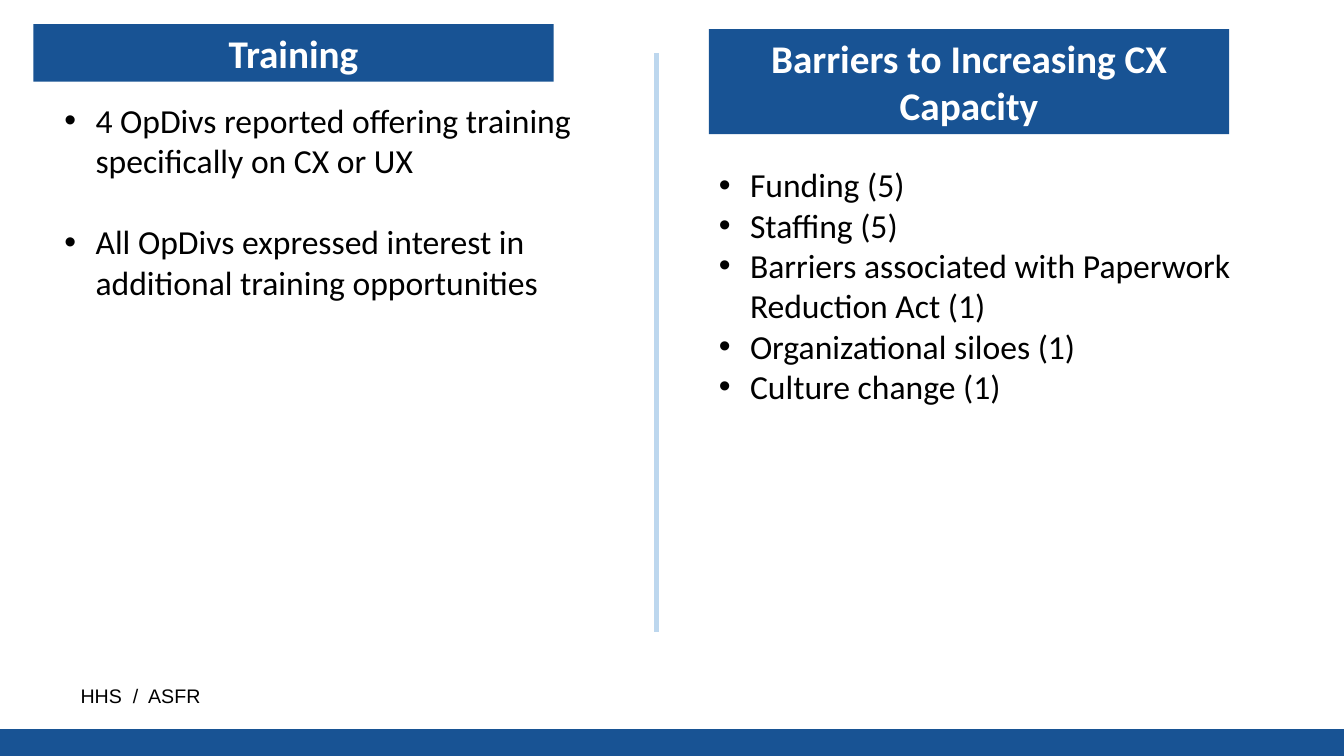
from dataclasses import dataclass

from lxml.etree import SubElement
from pptx import Presentation
from pptx.dml.color import RGBColor
from pptx.enum.shapes import MSO_CONNECTOR, MSO_SHAPE
from pptx.enum.text import MSO_ANCHOR, PP_ALIGN
from pptx.oxml.ns import qn
from pptx.shapes.autoshape import Shape
from pptx.slide import Slide
from pptx.util import Inches, Pt

WIDTH, HEIGHT = Inches(13.33), Inches(7.5)
BLUE, PALE_BLUE, BLACK, WHITE = "185394", "BDD7EE", "000000", "FFFFFF"
BULLET_INDENT = Inches(0.31)


@dataclass(frozen=True)
class Box:
    """A rectangle in percent of the slide's width and height."""
    left: float
    top: float
    width: float
    height: float

    def lengths(self) -> tuple[int, int, int, int]:
        return (across(self.left), down(self.top),
                across(self.width), down(self.height))


@dataclass(frozen=True)
class Column:
    title: str
    title_box: Box
    items: tuple[str, ...]
    items_box: Box
    gap: float = 0  # points between items


COLUMNS = (
    Column(
        "Training", Box(2.48, 3.2, 38.71, 7.6),
        ("4 OpDivs reported offering training specifically on CX or UX",
         "All OpDivs expressed interest in additional training opportunities"),
        Box(4.05, 12.53, 40, 28.27), gap=29.3),
    Column(
        "Barriers to Increasing CX Capacity", Box(52.74, 3.87, 38.71, 13.87),
        ("Funding (5)", "Staffing (5)",
         "Barriers associated with Paperwork Reduction Act (1)",
         "Organizational siloes (1)", "Culture change (1)"),
        Box(52.74, 21.07, 40, 33.6)),
)


def across(percent: float) -> int:
    return round(WIDTH * percent / 100)


def down(percent: float) -> int:
    return round(HEIGHT * percent / 100)


def color(value: str) -> RGBColor:
    return RGBColor.from_string(value)


def add_bar(slide: Slide, box: Box) -> Shape:
    shape = slide.shapes.add_shape(MSO_SHAPE.RECTANGLE, *box.lengths())
    shape.shadow.inherit = False
    shape.fill.solid()
    shape.fill.fore_color.rgb = color(BLUE)
    shape.line.fill.background()
    return shape


def write(shape: Shape, *texts: str, size: float, font: str = "Calibri",
          fill: str = BLACK, bold: bool = False, align: PP_ALIGN = PP_ALIGN.LEFT,
          bullets: bool = False, gap: float = 0) -> None:
    frame = shape.text_frame
    frame.word_wrap = True
    frame.vertical_anchor = MSO_ANCHOR.TOP
    for index, text in enumerate(texts):
        paragraph = frame.add_paragraph() if index else frame.paragraphs[0]
        paragraph.alignment = align
        paragraph.space_before = Pt(gap if index else 0)
        run = paragraph.add_run()
        run.text = text
        run.font.name, run.font.size, run.font.bold = font, Pt(size), bold
        run.font.color.rgb = color(fill)
        if bullets:
            properties = paragraph._p.get_or_add_pPr()
            properties.set("marL", str(BULLET_INDENT))
            properties.set("indent", str(-BULLET_INDENT))
            SubElement(properties, qn("a:buFont"), typeface="Arial")
            SubElement(properties, qn("a:buChar"), char="•")


def add_column(slide: Slide, column: Column) -> None:
    write(add_bar(slide, column.title_box), column.title, size=28,
          fill=WHITE, bold=True, align=PP_ALIGN.CENTER)
    write(slide.shapes.add_textbox(*column.items_box.lengths()), *column.items,
          size=24, bullets=True, gap=column.gap)


def add_divider(slide: Slide) -> None:
    line = slide.shapes.add_connector(
        MSO_CONNECTOR.STRAIGHT,
        across(48.84), down(7.07), across(48.84), down(83.6))
    line.line.color.rgb = color(PALE_BLUE)
    line.line.width = Pt(3)
    SubElement(line._element.spPr, qn("a:effectLst"))


def main() -> None:
    presentation = Presentation()
    presentation.slide_width, presentation.slide_height = WIDTH, HEIGHT
    slide = presentation.slides.add_slide(presentation.slide_layouts[6])

    # Footer band and label
    band = add_bar(slide, Box(0, 96.53, 100, 3.47))
    band.line.color.rgb = color(BLUE)
    band.line.width = Pt(1)
    label = slide.shapes.add_textbox(*Box(5.25, 89.87, 50, 4.53).lengths())
    write(label, "HHS  /  ASFR", size=14, font="Arial")

    # Two columns with a divider between them
    add_divider(slide)
    for column in COLUMNS:
        add_column(slide, column)

    presentation.save("out.pptx")


if __name__ == "__main__":
    main()
